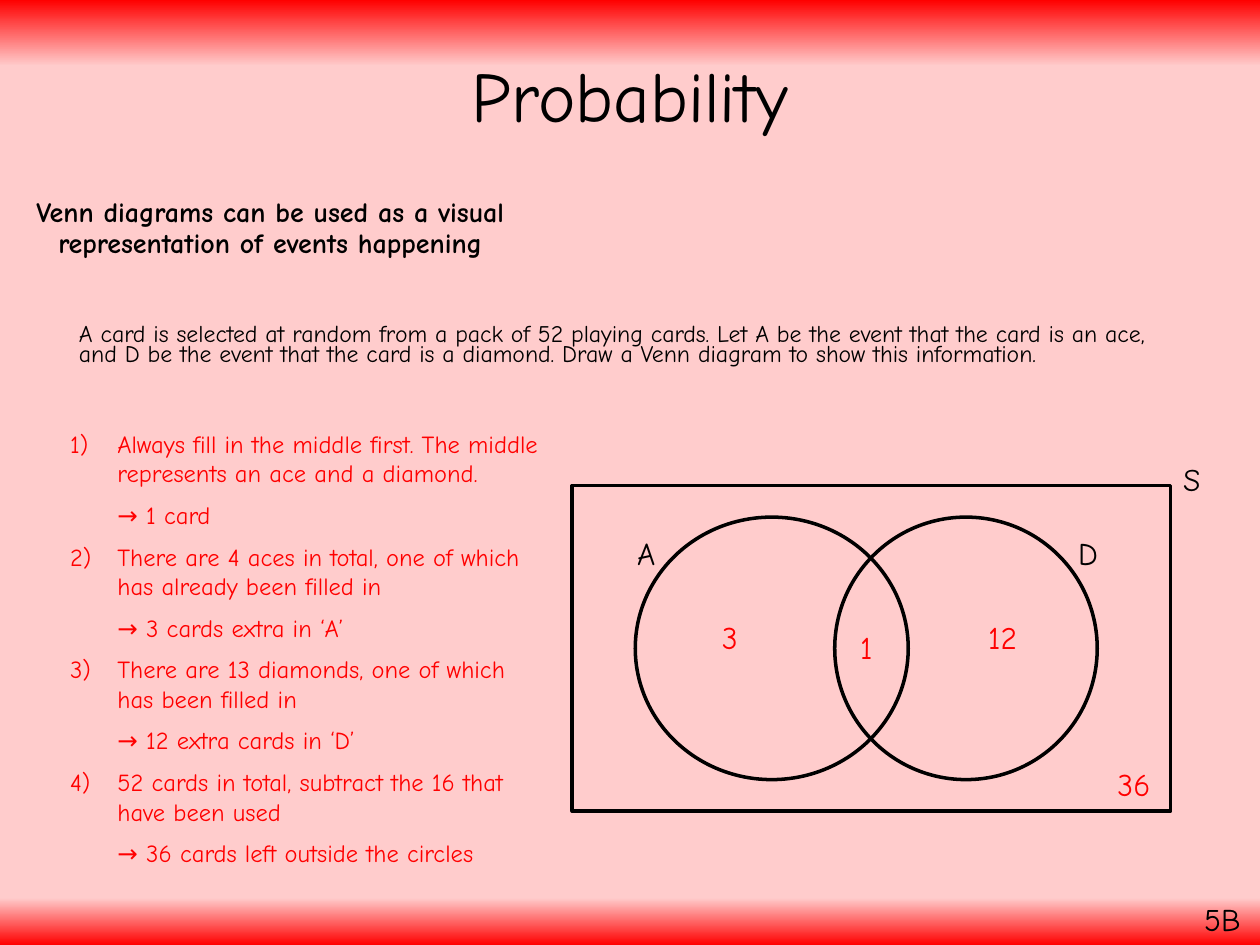
"""Build the probability slide with a Venn diagram of aces and diamonds."""
from lxml import etree
from pptx import Presentation
from pptx.dml.color import RGBColor
from pptx.enum import shapes, text
from pptx.oxml import ns
from pptx.util import Pt

BLACK = RGBColor(0, 0, 0)
RED = RGBColor(255, 0, 0)
PINK = RGBColor(255, 204, 204)
FONT = "Comic Neue"
LEFT, MID = text.PP_ALIGN.LEFT, text.PP_ALIGN.CENTER
RECT, OVAL = shapes.MSO_SHAPE.RECTANGLE, shapes.MSO_SHAPE.OVAL

STOPS = [(0, RED), (7, PINK), (95, PINK), (100, RED)]
TITLE = "Probability"
INTRO = "Venn diagrams can be used as a visual representation of events happening"
TASK = ("A card is selected at random from a pack of 52 playing cards. "
        "Let A be the event that the card is an ace, and D be the event that "
        "the card is a diamond. Draw a Venn diagram to show this information.")
STEPS = [
    ("Always fill in the middle first. The middle represents an ace and a diamond.",
     "→ 1 card"),
    ("There are 4 aces in total, one of which has already been filled in",
     "→ 3 cards extra in ‘A’"),
    ("There are 13 diamonds, one of which has been filled in",
     "→ 12 extra cards in ‘D’"),
    ("52 cards in total, subtract the 16 that have been used",
     "→ 36 cards left outside the circles"),
]
VENN = [
    (RECT, (327, 277.5, 342, 186)),
    (OVAL, (363, 295.5, 156, 150)),
    (OVAL, (477, 295.5, 150, 150)),
]
NAMES = [("A", 357, 301.5), ("D", 609, 301.5), ("S", 669, 259.5)]
COUNTS = [("1", 483, 355.5, 24), ("3", 405, 349.5, 24),
          ("12", 555, 349.5, 36), ("36", 627, 433.5, 42)]


def paint(slide):
    fill = slide.background.fill
    fill.gradient()
    fill.gradient_angle = 270
    stops = slide.element.find(".//" + ns.qn("a:gsLst"))
    for old in list(stops):
        stops.remove(old)
    for pos, tone in STOPS:
        stop = etree.SubElement(stops, ns.qn("a:gs"), pos=str(pos * 1000))
        etree.SubElement(stop, ns.qn("a:srgbClr"), val=str(tone))


def write(slide, box, lines, size, tone=BLACK, align=LEFT, bold=False,
          pitch=None, gap=0, wrap=True):
    frame = slide.shapes.add_textbox(*map(Pt, box)).text_frame
    frame.word_wrap = wrap
    frame.text = "\n".join(lines)
    for row, para in enumerate(frame.paragraphs):
        para.alignment = align
        para.line_spacing = pitch
        if row:
            para.space_before = Pt(gap)
        font = para.font
        font.name, font.size, font.bold = FONT, Pt(size), bold
        font.color.rgb = tone
    return frame


def indent(para, left, num=None):
    props = para._p.get_or_add_pPr()
    props.set("marL", str(Pt(left)))
    props.set("indent", str(Pt(-left if num else 0)))
    if num:
        mark = etree.Element(ns.qn("a:buAutoNum"), type="arabicParenR",
                             startAt=str(num))
        props.find(ns.qn("a:defRPr")).addprevious(mark)


def draw(slide, kind, box):
    shape = slide.shapes.add_shape(kind, *map(Pt, box))
    shape.shadow.inherit = False
    shape.fill.background()
    shape.line.color.rgb = BLACK
    shape.line.width = Pt(2)


def main():
    deck = Presentation()
    deck.slide_width, deck.slide_height = Pt(720), Pt(540)
    slide = deck.slides.add_slide(deck.slide_layouts[6])
    paint(slide)

    head = write(slide, (49.5, 17.5, 621, 78.5), [TITLE], 40.5, align=MID, pitch=0.9)
    head.vertical_anchor = text.MSO_ANCHOR.MIDDLE
    write(slide, (11.5, 110, 286, 50), [INTRO], 16, align=MID, bold=True, pitch=0.9)
    write(slide, (681, 511, 37.5, 29), ["5B"], 18, wrap=False)
    task = write(slide, (20, 183, 666, 47), [TASK], 13.6, pitch=0.7)
    indent(task.paragraphs[0], 18)

    for kind, box in VENN:
        draw(slide, kind, box)
    for name, left, top in NAMES:
        write(slide, (left, top, 24, 29), [name], 18)

    lines = [line for step in STEPS for line in step]
    steps = write(slide, (33, 241.5, 282, 284), lines, 14, RED, gap=7)
    for row, para in enumerate(steps.paragraphs):
        indent(para, 27, None if row % 2 else row // 2 + 1)

    for count, left, top, width in COUNTS:
        write(slide, (left, top, width, 29), [count], 18, RED, MID)
    deck.save("out.pptx")


if __name__ == "__main__":
    main()
